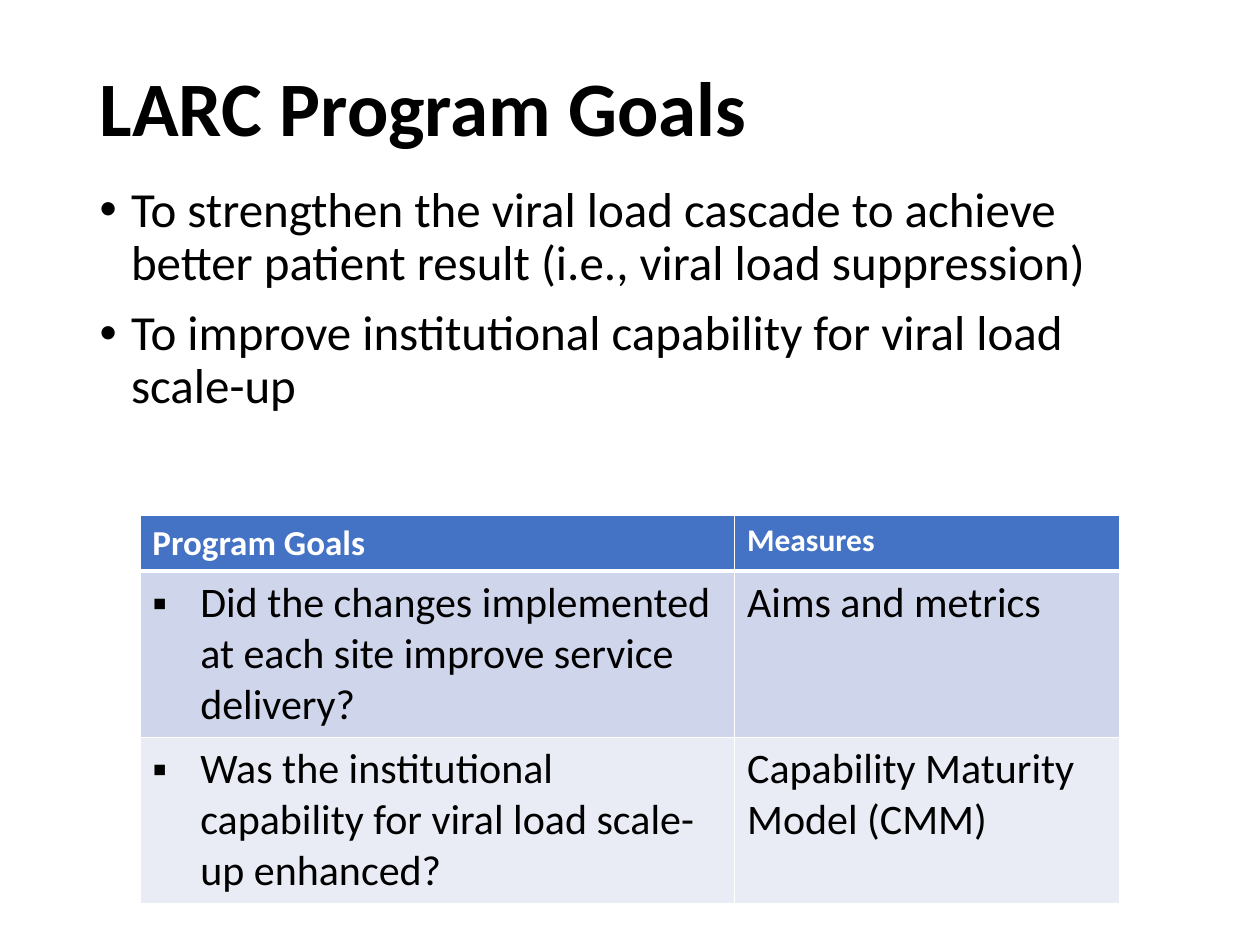
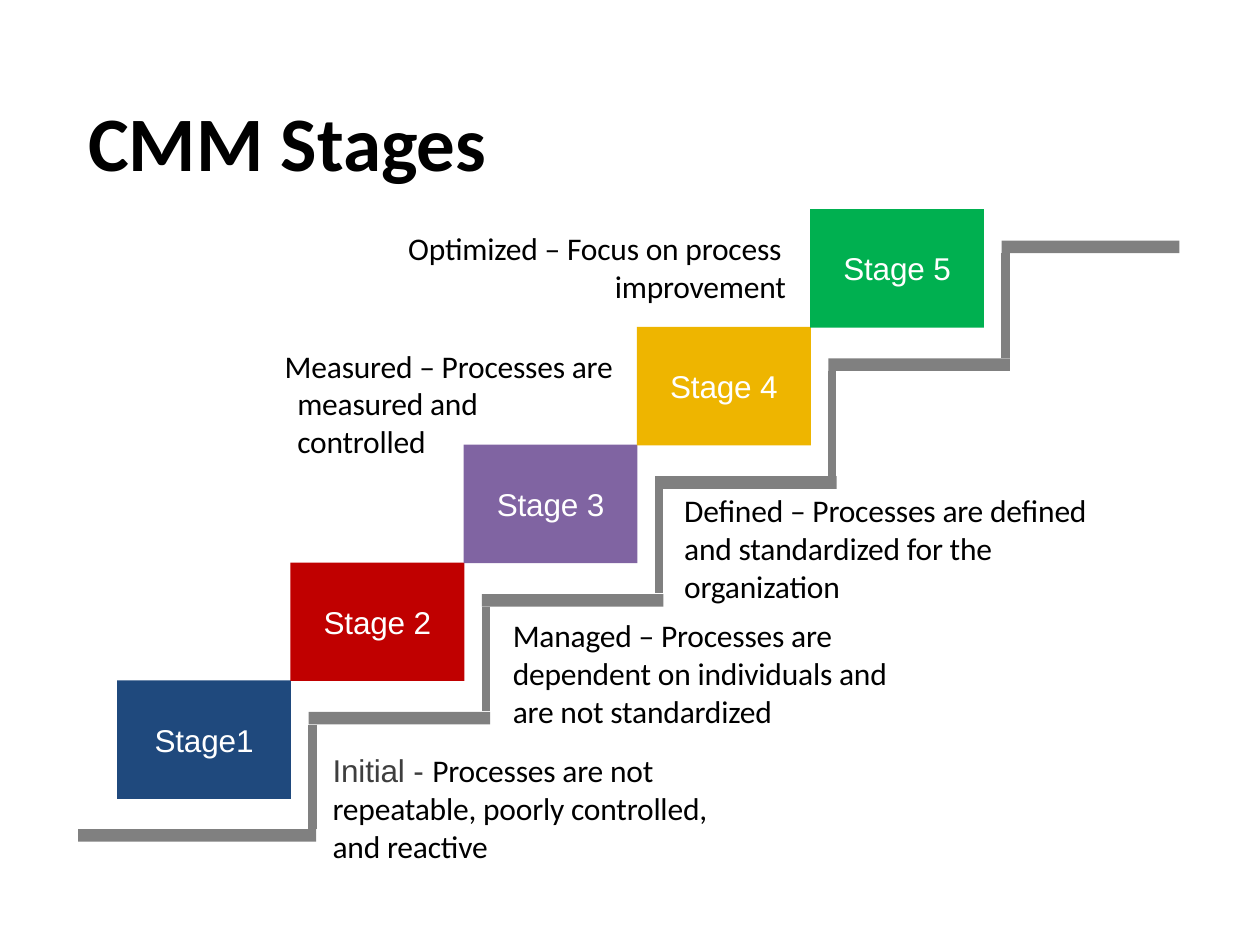
"""Builds two slides: the LARC program goals and the CMM stages staircase."""
from dataclasses import dataclass

from lxml import etree
from pptx import Presentation
from pptx.dml.color import RGBColor
from pptx.enum.shapes import MSO_CONNECTOR, MSO_SHAPE
from pptx.enum.text import MSO_ANCHOR, MSO_AUTO_SIZE, PP_ALIGN
from pptx.oxml.ns import qn
from pptx.util import Inches, Pt

BLACK = RGBColor(0x00, 0x00, 0x00)
WHITE = RGBColor(0xFF, 0xFF, 0xFF)
CHARCOAL = RGBColor(0x3E, 0x3E, 0x3E)
STAIR_GREY = RGBColor(0x80, 0x80, 0x80)
HEADER_BLUE = RGBColor(0x44, 0x72, 0xC4)
BAND_DARK = RGBColor(0xCF, 0xD5, 0xEA)
BAND_LIGHT = RGBColor(0xE9, 0xEB, 0xF5)
NAVY = RGBColor(0x1F, 0x49, 0x7D)
RED = RGBColor(0xC0, 0x00, 0x00)
PURPLE = RGBColor(0x80, 0x64, 0xA2)
GOLD = RGBColor(0xEE, 0xB5, 0x00)
GREEN = RGBColor(0x00, 0xB0, 0x50)

LEFT, CENTER = PP_ALIGN.LEFT, PP_ALIGN.CENTER
TOP, MIDDLE = MSO_ANCHOR.TOP, MSO_ANCHOR.MIDDLE
NO_AUTOFIT = MSO_AUTO_SIZE.NONE
RECTANGLE, STRAIGHT = MSO_SHAPE.RECTANGLE, MSO_CONNECTOR.STRAIGHT

BODY_FONT, STAGE_FONT = "Calibri", "Arial"
TITLE_AND_CONTENT, TITLE_ONLY = 1, 5
MARGIN, CONTENT_WIDTH = Inches(0.69), Inches(8.62)

STEP_RUN = round(Inches(5.5) / 4)
STEP_RISE = round(Inches(3.74) / 4)
STAGE_WIDTH, STAGE_HEIGHT = Inches(1.38), Inches(0.94)
TREAD_THICKNESS = Inches(0.1)


@dataclass(frozen=True)
class Style:
    """Character formatting of a run."""
    size: float
    color: RGBColor = BLACK
    font: str = BODY_FONT
    bold: bool = False
    spacing: int = 0


@dataclass(frozen=True)
class Stage:
    """One coloured step of the staircase."""
    label: str
    color: RGBColor


@dataclass(frozen=True)
class Line:
    """One paragraph of a description with its indents in inches."""
    runs: tuple
    indent: float = 0.01
    first_line: float = 0


@dataclass(frozen=True)
class Description:
    """Text beside a stage, with its place in inches."""
    left: float
    top: float
    width: float
    height: float
    lines: tuple


TITLE_STYLE = Style(44, bold=True)
GOAL_STYLE = Style(28)
CELL_STYLE = Style(24)
STAGE_STYLE = Style(18, WHITE, STAGE_FONT, spacing=-10)
TEXT_STYLE = Style(18, spacing=-10)
INITIAL_STYLE = Style(18, CHARCOAL, STAGE_FONT, spacing=-10)

GOALS = (
    "To strengthen the viral load cascade to achieve better patient result "
    "(i.e., viral load suppression)",
    "To improve institutional capability for viral load scale-up",
)
HEADERS = (("Program Goals", 20), ("Measures", 18))
MEASURES = (
    ("Did the changes implemented at each site improve service delivery?",
     "Aims and metrics", BAND_DARK),
    ("Was the institutional capability for viral load scale-up enhanced?",
     "Capability Maturity Model (CMM)", BAND_LIGHT),
)
STAGES = (
    Stage("Stage1", NAVY),
    Stage("Stage 2", RED),
    Stage("Stage 3", PURPLE),
    Stage("Stage 4", GOLD),
    Stage("Stage 5", GREEN),
)
DESCRIPTIONS = (
    Description(2.63, 5.96, 3.05, 0.92, (
        Line((("Initial - ", INITIAL_STYLE),
              ("Processes are not repeatable, poorly controlled, and reactive",
               TEXT_STYLE))),)),
    Description(4.06, 4.89, 3.05, 0.93, (
        Line((("Managed – Processes are dependent on individuals and "
               "are not standardized", TEXT_STYLE),)),)),
    Description(5.42, 3.9, 3.28, 0.93, (
        Line((("Defined – Processes are defined and standardized for the "
               "organization", TEXT_STYLE),)),)),
    Description(2.25, 2.75, 2.67, 0.92, (
        Line((("Measured – Processes are measured and\ncontrolled",
               TEXT_STYLE),), 0.11, -0.1),)),
    Description(3.23, 1.82, 3.04, 0.63, (
        Line((("Optimized – Focus on process", TEXT_STYLE),)),
        Line((("improvement", TEXT_STYLE),), 1.65))),
)


def add_run(paragraph, text: str, style: Style) -> None:
    """Adds styled text, turning each newline into a line break."""
    for number, part in enumerate(text.split("\n")):
        if number:
            paragraph.add_line_break()
        run = paragraph.add_run()
        run.text = part
        font = run.font
        font.name, font.size, font.bold = style.font, Pt(style.size), style.bold
        font.color.rgb = style.color
        if style.spacing:
            run._r.get_or_add_rPr().set("spc", str(style.spacing))


def set_indent(paragraph, left: float, first_line: float) -> None:
    """Sets the left and first-line indents in inches."""
    properties = paragraph._p.get_or_add_pPr()
    properties.set("marL", str(Inches(left)))
    properties.set("indent", str(Inches(first_line)))


def set_bullet(paragraph, symbol: str, indent: float) -> None:
    """Gives the paragraph a hanging bullet."""
    set_indent(paragraph, indent, -indent)
    properties = paragraph._p.get_or_add_pPr()
    etree.SubElement(properties, qn("a:buFont")).set("typeface", STAGE_FONT)
    etree.SubElement(properties, qn("a:buChar")).set("char", symbol)


def place(shape, left: int, top: int, width: int, height: int) -> None:
    """Moves and sizes a placeholder."""
    shape.left, shape.top, shape.width, shape.height = left, top, width, height


def clear_insets(frame) -> None:
    """Removes the inner margins of a text frame."""
    frame.margin_left = frame.margin_right = 0
    frame.margin_top = frame.margin_bottom = 0


def set_title(slide, text: str, top: int, height: int):
    """Fills the title placeholder and returns its text frame."""
    title = slide.shapes.title
    place(title, MARGIN, top, CONTENT_WIDTH, height)
    frame = title.text_frame
    frame.auto_size, frame.vertical_anchor = NO_AUTOFIT, MIDDLE
    frame.paragraphs[0].alignment = LEFT
    add_run(frame.paragraphs[0], text, TITLE_STYLE)
    return frame


def set_borders(cell, top: float, bottom: float) -> None:
    """Draws white cell borders with the given top and bottom widths."""
    sides = (("L", 1), ("R", 1), ("T", top), ("B", bottom))
    for position, (side, width) in enumerate(sides):
        border = etree.Element(qn(f"a:ln{side}"), w=str(Pt(width)))
        fill = etree.SubElement(border, qn("a:solidFill"))
        etree.SubElement(fill, qn("a:srgbClr")).set("val", str(WHITE))
        cell._tc.get_or_add_tcPr().insert(position, border)


def fill_cell(cell, text: str, style: Style, color: RGBColor,
              top: float = 1, bottom: float = 1) -> None:
    """Writes and colours one table cell."""
    cell.fill.solid()
    cell.fill.fore_color.rgb = color
    set_borders(cell, top, bottom)
    add_run(cell.text_frame.paragraphs[0], text, style)


def add_measures_table(slide) -> None:
    """Adds the table of program goals and their measures."""
    table = slide.shapes.add_table(
        3, 2, Inches(1.11), Inches(4.09), Inches(7.78), Inches(3.03)).table
    for column, width in zip(table.columns, (4.72, 3.06)):
        column.width = Inches(width)
    for row, height in zip(table.rows, (0.41, 1.31, 1.31)):
        row.height = Inches(height)
    for index, (header, size) in enumerate(HEADERS):
        fill_cell(table.cell(0, index), header, Style(size, WHITE, bold=True),
                  HEADER_BLUE, bottom=3)
    for index, (goal, measure, band) in enumerate(MEASURES, start=1):
        top = 3 if index == 1 else 1
        goal_cell = table.cell(index, 0)
        fill_cell(goal_cell, goal, CELL_STYLE, band, top)
        set_bullet(goal_cell.text_frame.paragraphs[0], "▪", 0.38)
        fill_cell(table.cell(index, 1), measure, CELL_STYLE, band, top)


def build_goals_slide(deck) -> None:
    """Builds the slide of program goals."""
    slide = deck.slides.add_slide(deck.slide_layouts[TITLE_AND_CONTENT])
    heading = set_title(slide, "LARC Program Goals", Inches(0.33), Inches(1.11))
    heading.paragraphs[0].line_spacing = 0.9
    body = slide.placeholders[1]
    place(body, MARGIN, Inches(1.42), CONTENT_WIDTH, Inches(2.59))
    frame = body.text_frame
    frame.auto_size, frame.vertical_anchor = NO_AUTOFIT, TOP
    for index, goal in enumerate(GOALS):
        paragraph = frame.add_paragraph() if index else frame.paragraphs[0]
        paragraph.line_spacing, paragraph.space_before = 0.9, Pt(10)
        set_bullet(paragraph, "•", 0.25)
        add_run(paragraph, goal, GOAL_STYLE)
    add_measures_table(slide)


def add_block(slide, left: int, top: int, width: int, height: int,
              color: RGBColor):
    """Adds a plain filled rectangle."""
    block = slide.shapes.add_shape(RECTANGLE, left, top, width, height)
    block.shadow.inherit = False
    block.fill.solid()
    block.fill.fore_color.rgb = color
    block.line.fill.background()
    return block


def add_stage(slide, stage: Stage, step: int) -> None:
    """Adds the labelled block of a stage."""
    block = add_block(slide, Inches(0.93) + step * STEP_RUN,
                      Inches(5.4) - step * STEP_RISE,
                      STAGE_WIDTH, STAGE_HEIGHT, stage.color)
    frame = block.text_frame
    clear_insets(frame)
    frame.vertical_anchor = MIDDLE
    frame.paragraphs[0].alignment = CENTER
    add_run(frame.paragraphs[0], stage.label, STAGE_STYLE)


def add_stair(slide, step: int) -> None:
    """Adds the riser and tread to the right of a stage."""
    left = Inches(2.45) + step * STEP_RUN
    top = Inches(5.65) - step * STEP_RISE
    riser_x, riser_top = left + Inches(0.03), top + TREAD_THICKNESS
    riser = slide.shapes.add_connector(
        STRAIGHT, riser_x, riser_top, riser_x, riser_top + Inches(0.83))
    riser.line.color.rgb, riser.line.width = STAIR_GREY, Pt(4.63)
    etree.SubElement(riser._element.spPr, qn("a:effectLst"))
    add_block(slide, left, top, Inches(1.44 if step < 4 else 1.41),
              TREAD_THICKNESS, STAIR_GREY)


def add_description(slide, description: Description) -> None:
    """Adds the text that explains a stage."""
    box = slide.shapes.add_textbox(
        Inches(description.left), Inches(description.top),
        Inches(description.width), Inches(description.height))
    frame = box.text_frame
    frame.word_wrap = True
    clear_insets(frame)
    for index, line in enumerate(description.lines):
        paragraph = frame.add_paragraph() if index else frame.paragraphs[0]
        set_indent(paragraph, line.indent, line.first_line)
        for text, style in line.runs:
            add_run(paragraph, text, style)


def build_stages_slide(deck) -> None:
    """Builds the staircase slide of CMM stages."""
    slide = deck.slides.add_slide(deck.slide_layouts[TITLE_ONLY])
    heading = set_title(slide, "CMM Stages", Inches(0.75), Inches(0.74))
    clear_insets(heading)
    set_indent(heading.paragraphs[0], 0.01, 0)
    add_block(slide, Inches(0.62), Inches(6.58), Inches(1.89),
              TREAD_THICKNESS, STAIR_GREY)
    for step, stage in enumerate(STAGES):
        add_stage(slide, stage, step)
        add_stair(slide, step)
    for description in DESCRIPTIONS:
        add_description(slide, description)


def main() -> None:
    """Creates and saves the deck."""
    deck = Presentation()
    deck.slide_width, deck.slide_height = Inches(10), Inches(7.5)
    build_goals_slide(deck)
    build_stages_slide(deck)
    deck.save("out.pptx")


if __name__ == "__main__":
    main()
